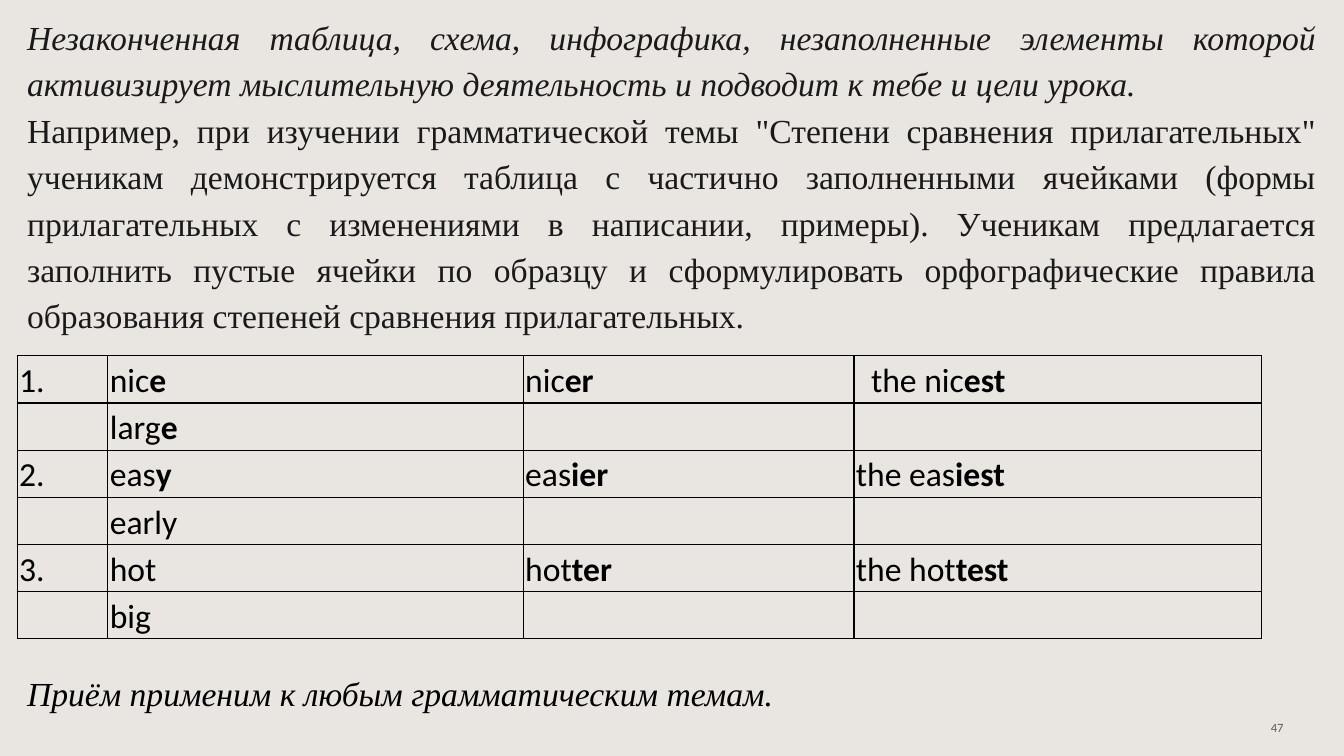
"""Builds the slide about an unfinished table of degrees of comparison."""
from lxml.etree import SubElement
from pptx import Presentation
from pptx.dml.color import RGBColor
from pptx.enum.text import MSO_ANCHOR, PP_ALIGN
from pptx.oxml.ns import qn
from pptx.util import Inches, Pt

INTRO = [
    ("Незаконченная таблица, схема, инфографика, незаполненные элементы которой "
     "активизирует мыслительную деятельность и подводит к тебе и цели урока.", True),
    ("Например, при изучении грамматической темы \"Степени сравнения прилагательных\" "
     "ученикам демонстрируется таблица с частично заполненными ячейками (формы "
     "прилагательных с изменениями в написании, примеры). Ученикам предлагается "
     "заполнить пустые ячейки по образцу и сформулировать орфографические правила "
     "образования степеней сравнения прилагательных.", False),
]
CLOSING = [("Приём применим к любым грамматическим темам.", True)]
PAGE = [("47", False)]
DEGREES = [
    [("1.", ""), ("nic", "e"), ("nic", "er"), ("the nic", "est")],
    [("", ""), ("larg", "e"), ("", ""), ("", "")],
    [("2.", ""), ("eas", "y"), ("eas", "ier"), ("the eas", "iest")],
    [("", ""), ("early", ""), ("", ""), ("", "")],
    [("3.", ""), ("hot", ""), ("hot", "ter"), ("the hot", "test")],
    [("", ""), ("big", ""), ("", ""), ("", "")],
]
INDENTED = (0, 3)

WIDTH, HEIGHT = 13.33, 7.5
LEFT = 0.17
TABLE_TOP, TABLE_HEIGHT = 3.53, 2.8
COLUMNS = [0.9, 4.12, 3.28, 4.04]
PAD, INDENT = 0.02, 0.17

SAND = RGBColor(0xE9, 0xE5, 0xE1)
BLACK = RGBColor(0, 0, 0)
INK = RGBColor(0x1A, 0x1A, 0x1A)
GRAY = RGBColor(0x5D, 0x5C, 0x5A)
SERIF, SANS = "Times New Roman", "Calibri"


def set_font(font, name, size, color):
    font.name, font.size = name, Pt(size)
    font.color.rgb = color


def add_text(s, box, items, color, name=SERIF, size=24,
             align=PP_ALIGN.JUSTIFY, spacing=1.15, anchor=MSO_ANCHOR.TOP):
    tf = s.shapes.add_textbox(*map(Inches, box)).text_frame
    tf.word_wrap = True
    tf.vertical_anchor = anchor
    for i, (text, italic) in enumerate(items):
        p = tf.add_paragraph() if i else tf.paragraphs[0]
        p.text, p.alignment, p.line_spacing = text, align, spacing
        set_font(p.font, name, size, color)
        p.font.italic = italic


def add_borders(cell):
    tc_pr = cell._tc.get_or_add_tcPr()
    for i, side in enumerate(("lnL", "lnR", "lnT", "lnB")):
        ln = tc_pr.makeelement(qn(f"a:{side}"), {"w": str(Pt(1))})
        fill = SubElement(ln, qn("a:solidFill"))
        SubElement(fill, qn("a:srgbClr"), val=str(BLACK))
        tc_pr.insert(i, ln)


def fill_cell(cell, stem, ending, indent):
    cell.margin_left = Inches(indent)
    cell.margin_right = cell.margin_top = cell.margin_bottom = Inches(PAD)
    cell.fill.background()
    add_borders(cell)
    p = cell.text_frame.paragraphs[0]
    p.line_spacing, p.space_after = 1.07, Pt(8)
    set_font(p.font, SANS, 24, BLACK)
    for text, bold in ((stem, False), (ending, True)):
        if text:
            r = p.add_run()
            r.text, r.font.bold = text, bold


def add_degrees(s):
    frame = s.shapes.add_table(len(DEGREES), len(COLUMNS), *map(
        Inches, (LEFT, TABLE_TOP, sum(COLUMNS), TABLE_HEIGHT)))
    table = frame.table
    table.first_row = table.horz_banding = False
    for column, width in zip(table.columns, COLUMNS):
        column.width = Inches(width)
    for i, row in enumerate(DEGREES):
        table.rows[i].height = Inches(TABLE_HEIGHT / len(DEGREES))
        for j, (stem, ending) in enumerate(row):
            indent = INDENT if (i, j) == INDENTED else PAD
            fill_cell(table.cell(i, j), stem, ending, indent)


def main():
    prs = Presentation()
    prs.slide_width, prs.slide_height = Inches(WIDTH), Inches(HEIGHT)
    s = prs.slides.add_slide(prs.slide_layouts[6])
    s.background.fill.solid()
    s.background.fill.fore_color.rgb = SAND
    add_text(s, (9.83, 7.02, 3, 0.4), PAGE, GRAY, SANS, 9,
             PP_ALIGN.RIGHT, 1.0, MSO_ANCHOR.MIDDLE)
    add_text(s, (LEFT, 0.06, 12.98, 3.32), INTRO, INK)
    add_degrees(s)
    add_text(s, (LEFT, 6.57, 12.84, 0.57), CLOSING, BLACK)
    prs.save("out.pptx")


if __name__ == "__main__":
    main()
